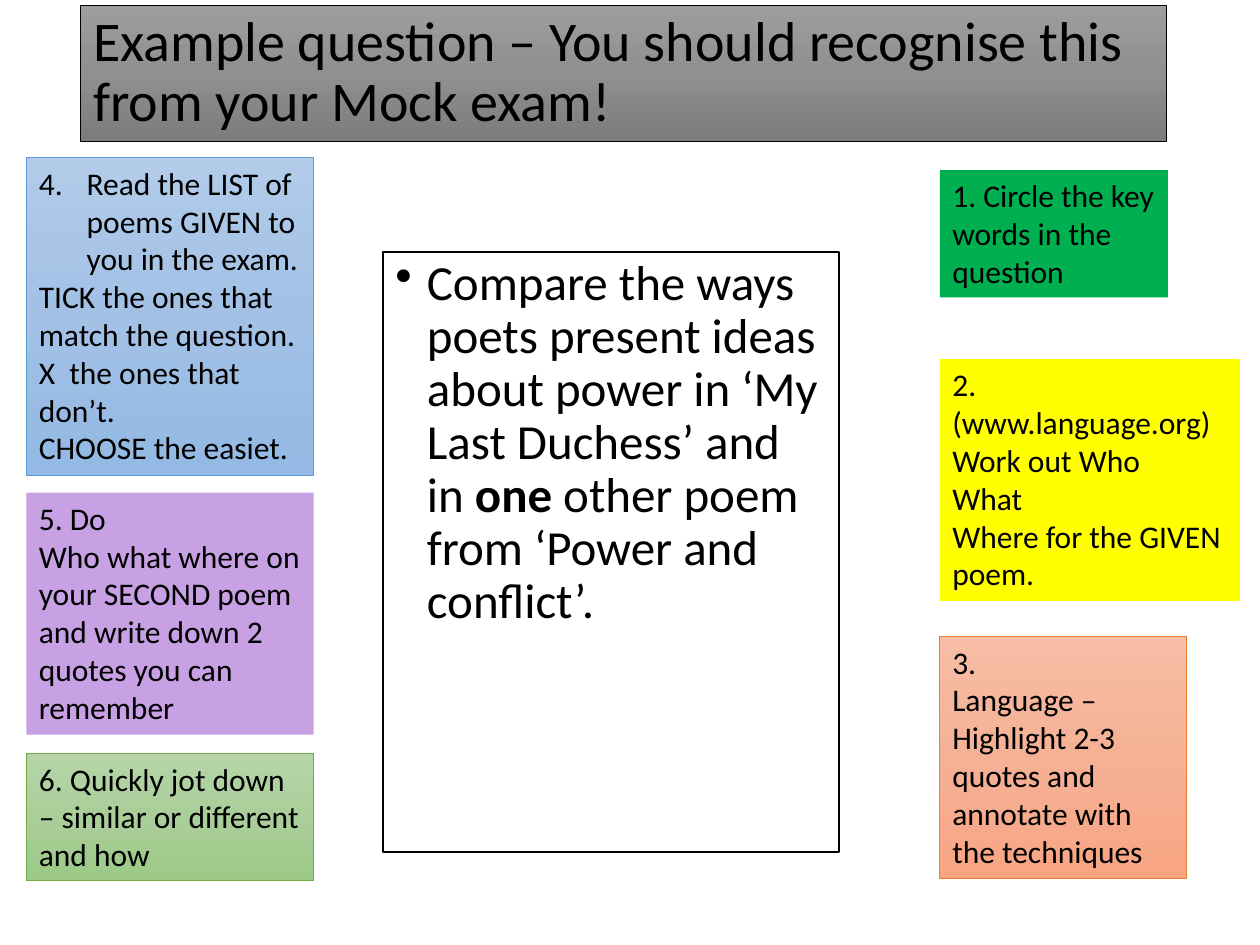
from copy import deepcopy

from lxml.etree import SubElement
from pptx import Presentation
from pptx.dml.color import RGBColor
from pptx.enum.shapes import MSO_SHAPE
from pptx.enum.text import MSO_ANCHOR, PP_ALIGN
from pptx.oxml.ns import qn
from pptx.util import Inches, Pt

BLACK = "000000"
LEFT_COLUMN, LEFT_WIDTH = 0.21, 2.28
RIGHT_COLUMN = 7.46


def color(hex_text):
    return RGBColor.from_string(hex_text)


def add_bullet(para, indent, tag, **attributes):
    """Give a paragraph a hanging indent and a bullet or number element."""
    properties = para._p.get_or_add_pPr()
    properties.set("marL", str(Inches(indent)))
    properties.set("indent", str(-Inches(indent)))
    SubElement(properties, qn(tag), **attributes)


def write(para, text, size=18, bold=False):
    span = para.add_run()
    span.text = text
    span.font.name = "Calibri"
    span.font.size = Pt(size)
    span.font.bold = bold
    span.font.color.rgb = color(BLACK)


class SlideBuilder:
    """Holds the current slide and the style of its boxes."""

    def __init__(self, deck):
        self.slide = deck.slides.add_slide(deck.slide_layouts[6])

    def fill(self, box, colors):
        """Fill with one colour, or with three from top to bottom."""
        if len(colors) == 1:
            box.fill.solid()
            box.fill.fore_color.rgb = color(colors[0])
            return
        box.fill.gradient()
        box.fill.gradient_angle = 270
        stop_list = box._element.spPr.find(qn("a:gradFill")).find(qn("a:gsLst"))
        stop_list.insert(1, deepcopy(stop_list[0]))
        for stop, position, shade in zip(box.fill.gradient_stops, (0, 0.5, 1), colors):
            stop.position = position
            stop.color.rgb = color(shade)

    def box(self, left, top, width, height, *colors, line=None, line_width=0.5,
            anchor=MSO_ANCHOR.TOP):
        box = self.slide.shapes.add_shape(
            MSO_SHAPE.RECTANGLE, Inches(left), Inches(top), Inches(width), Inches(height))
        box.shadow.inherit = False
        self.fill(box, colors)
        if line:
            box.line.color.rgb = color(line)
            box.line.width = Pt(line_width)
        else:
            box.line.fill.background()
        frame = box.text_frame
        frame.word_wrap = True
        frame.vertical_anchor = anchor
        frame.paragraphs[0].alignment = PP_ALIGN.LEFT
        return frame

    def note(self, place, texts, *colors, line=None):
        frame = self.box(*place, *colors, line=line)
        for index, text in enumerate(texts):
            para = frame.add_paragraph() if index else frame.paragraphs[0]
            para.alignment = PP_ALIGN.LEFT
            write(para, text)
        return frame


def main():
    deck = Presentation()
    deck.slide_width, deck.slide_height = Inches(10), Inches(7.5)
    page = SlideBuilder(deck)

    title = page.box(0.64, 0.04, 8.62, 1.08, "9D9D9D", "909090", "7C7C7C",
                     line=BLACK, anchor=MSO_ANCHOR.MIDDLE).paragraphs[0]
    title.line_spacing = 0.9
    write(title, "Example question – You should recognise this from your Mock exam!", size=32)

    page.note((RIGHT_COLUMN, 1.35, 1.81, 1.01),
              ["1. Circle the key words in the question"], "00B050")
    page.note((RIGHT_COLUMN, 2.85, 2.38, 1.92),
              ["2. (www.language.org)", "Work out Who", "What",
               "Where for the GIVEN poem."], "FFFF00")
    page.note((RIGHT_COLUMN, 5.05, 1.96, 1.92),
              ["3.", "Language – Highlight 2-3 quotes and annotate with the techniques"],
              "F7BDA5", "F5B196", "F8A582", line="ED7D31")

    choices = page.note((LEFT_COLUMN, 1.25, LEFT_WIDTH, 2.52),
                        ["Read the LIST of poems GIVEN to you in the exam.",
                         "TICK the ones that match the question.",
                         "X  the ones that don’t.", "CHOOSE the easiet."],
                        "B1CBE9", "A3C1E5", "93B9E4", line="5B9BD5")
    add_bullet(choices.paragraphs[0], 0.38, "a:buAutoNum", type="arabicPeriod", startAt="4")
    page.note((LEFT_COLUMN, 3.91, LEFT_WIDTH, 1.92),
              ["5. Do", "Who what where on your SECOND poem and write down 2 "
               "quotes you can remember"], "C7A1E3")
    page.note((LEFT_COLUMN, 5.98, LEFT_WIDTH, 1.01),
              ["6. Quickly jot down – similar or different and how"],
              "B5D5A7", "AACE9A", "9CC987", line="70AD47")

    question = page.box(3.04, 2, 3.62, 4.76, "FFFFFF", line=BLACK, line_width=1).paragraphs[0]
    add_bullet(question, 0.25, "a:buChar", char="•")
    question.line_spacing = 0.9
    write(question, "Compare the ways poets present ideas about power in "
          "‘My Last Duchess’ and in ", size=28)
    write(question, "one", size=28, bold=True)
    write(question, " other poem from ‘Power and conflict’.", size=28)

    deck.save("out.pptx")


if __name__ == "__main__":
    main()
